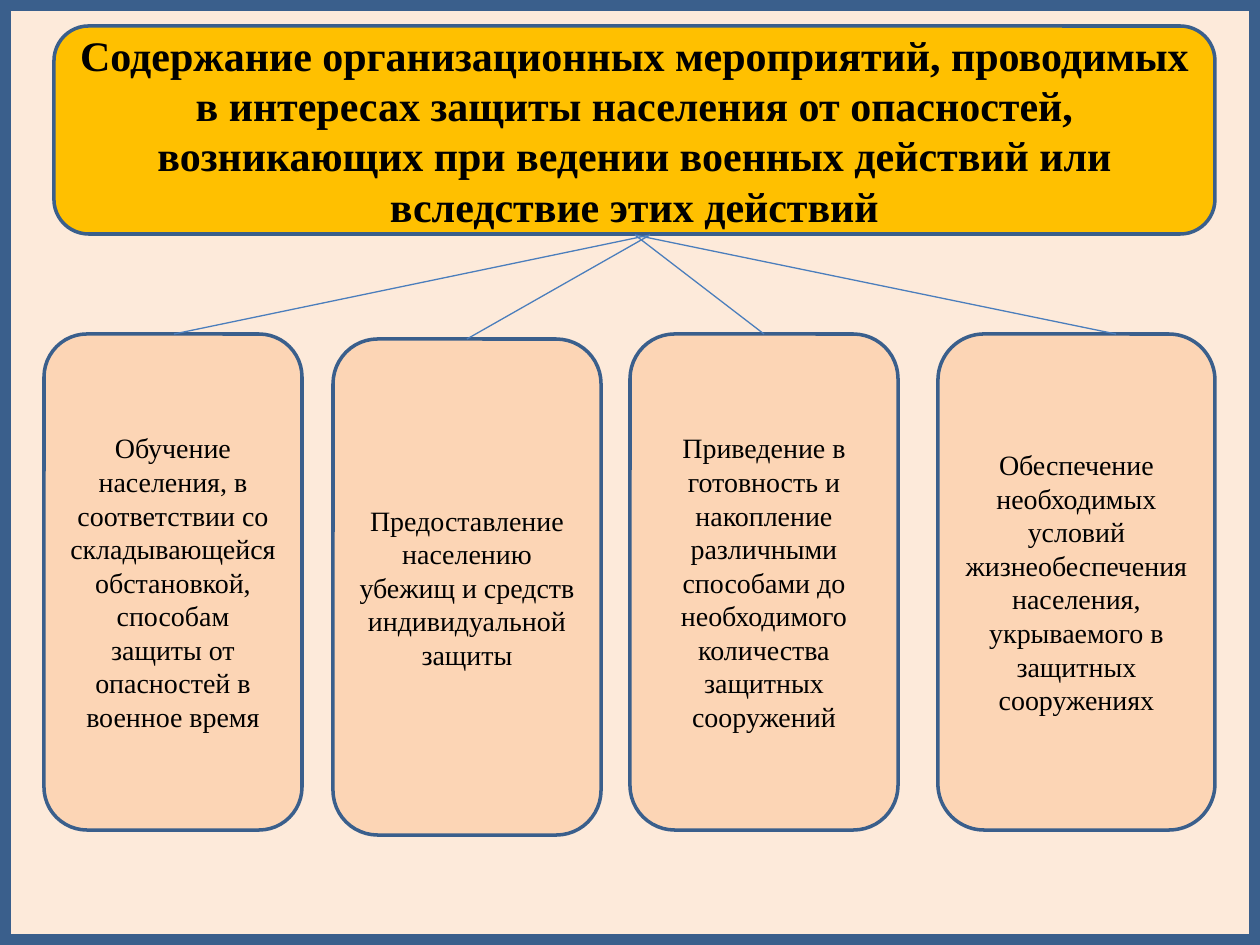
from pptx import Presentation
from pptx.dml.color import RGBColor
from pptx.enum.shapes import MSO_CONNECTOR, MSO_SHAPE
from pptx.enum.text import MSO_ANCHOR, PP_ALIGN
from pptx.oxml.ns import qn
from pptx.util import Emu, Pt
from lxml import etree

RECT = MSO_SHAPE.RECTANGLE
ROUNDED = MSO_SHAPE.ROUNDED_RECTANGLE
STRAIGHT = MSO_CONNECTOR.STRAIGHT
MIDDLE = MSO_ANCHOR.MIDDLE
CENTER = PP_ALIGN.CENTER
EMU_PER_INCH = 914400
PX_PER_INCH = 126
BORDER = "3A5F8C"
TITLE_FORMAT = {"name": "Times New Roman", "size": Pt(24), "bold": True}
CARD_FORMAT = {"name": "Times New Roman", "size": Pt(16), "bold": False}


def px(*lengths):
    return [Emu(round(length * EMU_PER_INCH / PX_PER_INCH)) for length in lengths]


def color(target, value):
    target.rgb = RGBColor.from_string(value)


deck = Presentation()
deck.slide_width, deck.slide_height = px(1260, 945)
page = deck.slides.add_slide(deck.slide_layouts[6])

title = (
    "Содержание организационных мероприятий, проводимых в интересах защиты "
    "населения от опасностей, возникающих при ведении военных действий или "
    "вследствие этих действий"
)
card_height = 496
line_top = 235
cards = [
    (44, 334, 258, 650, 174,
     "Обучение населения, в соответствии со складывающейся обстановкой, "
     "способам защиты от опасностей в военное время"),
    (333, 339, 268, 650, 467,
     "Предоставление населению убежищ и средств индивидуальной защиты"),
    (630, 334, 268, 635, 764,
     "Приведение в готовность и накопление различными способами до "
     "необходимого количества защитных сооружений"),
    (938, 334, 277, 635, 1116,
     "Обеспечение необходимых условий жизнеобеспечения населения, "
     "укрываемого в защитных сооружениях"),
]

boxes = [
    (RECT, (0, 0, 1260, 945), "FDEADA", 12.25, "", {}),
    (ROUNDED, (54, 26, 1161, 208), "FFC000", 2, title, TITLE_FORMAT),
]
for left, top, width, start, end, text in cards:
    place = (left, top, width, card_height)
    boxes.append((ROUNDED, place, "FCD5B5", 2, text, CARD_FORMAT))

for kind, place, fill, line_width, text, text_format in boxes:
    box = page.shapes.add_shape(kind, *px(*place))
    box.shadow.inherit = False
    box.fill.solid()
    color(box.fill.fore_color, fill)
    color(box.line.color, BORDER)
    box.line.width = Pt(line_width)
    if text:
        box.text_frame.word_wrap = True
        box.text_frame.vertical_anchor = MIDDLE
        para = box.text_frame.paragraphs[0]
        para.alignment = CENTER
        span = para.add_run()
        span.text = text
        color(span.font.color, "000000")
        for name, value in text_format.items():
            setattr(span.font, name, value)

for left, top, width, start, end, text in cards:
    line = page.shapes.add_connector(STRAIGHT, *px(start, line_top, end, top))
    color(line.line.color, "4B7EBC")
    line.line.width = Pt(0.75)
    etree.SubElement(line._element.spPr, qn("a:effectLst"))

deck.save("out.pptx")
